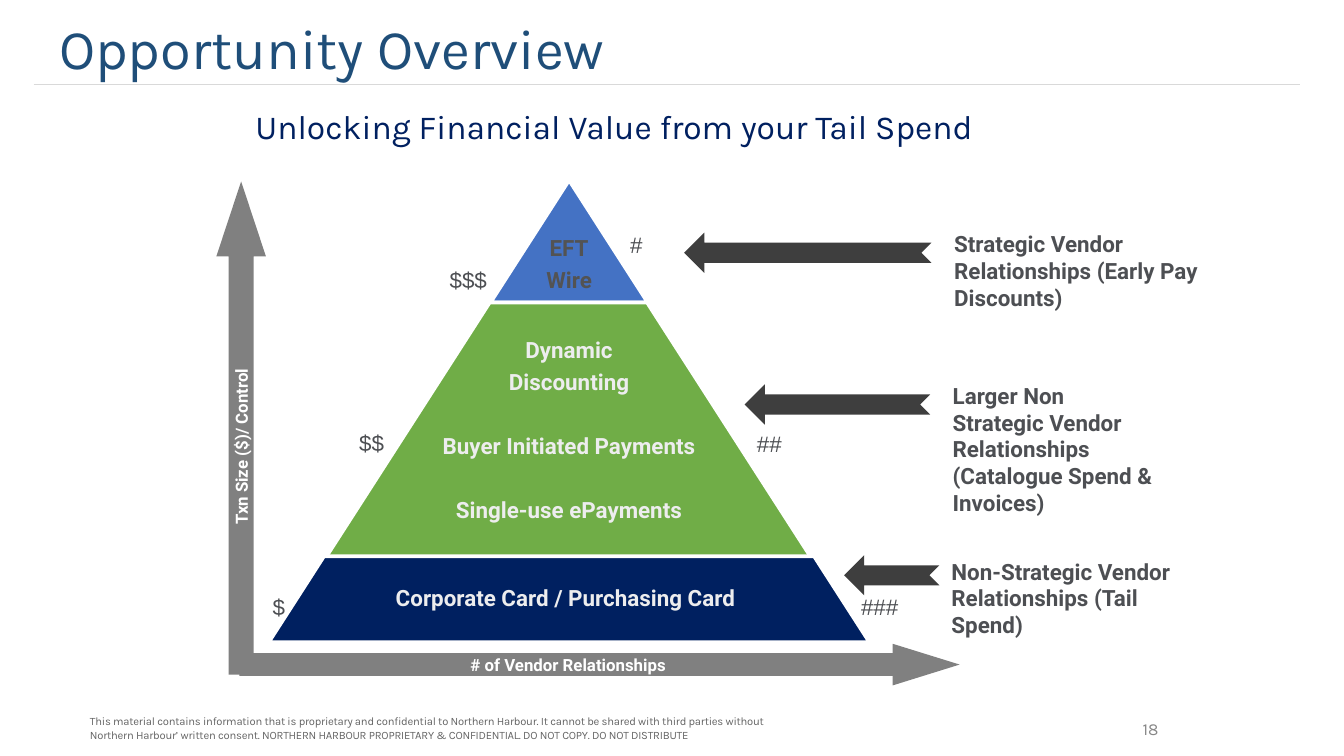
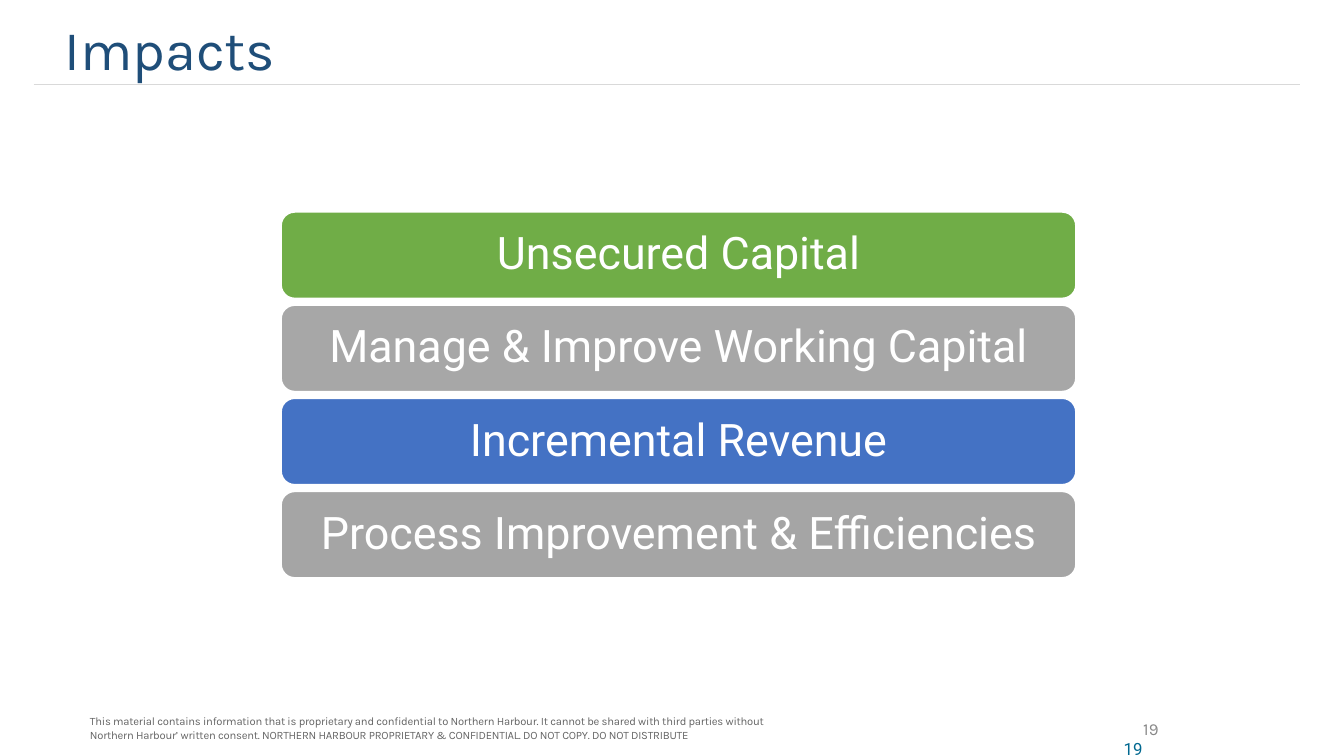
from dataclasses import dataclass

import lxml.etree
import pptx
import pptx.dml.color
import pptx.enum.shapes
import pptx.enum.text
import pptx.oxml.ns
import pptx.util

Pt = pptx.util.Pt
RGBColor = pptx.dml.color.RGBColor
Shape = pptx.enum.shapes.MSO_SHAPE
Align = pptx.enum.text.PP_ALIGN
Anchor = pptx.enum.text.MSO_ANCHOR

WHITE = RGBColor(0xFF, 0xFF, 0xFF)
TITLE_BLUE = RGBColor(0x1F, 0x4E, 0x79)
NAVY = RGBColor(0x00, 0x20, 0x60)
BLUE = RGBColor(0x44, 0x72, 0xC4)
GREEN = RGBColor(0x70, 0xAD, 0x47)
TEAL = RGBColor(0x00, 0x68, 0x90)
BAR_GRAY = RGBColor(0xA7, 0xA7, 0xA7)
BAR_GRAY_DARK = RGBColor(0xA5, 0xA5, 0xA5)
AXIS_GRAY = RGBColor(0x80, 0x80, 0x80)
ARROW_GRAY = RGBColor(0x3E, 0x3E, 0x3E)
RULE_GRAY = RGBColor(0xD9, 0xD9, 0xD9)
FOOTER_GRAY = RGBColor(0x64, 0x64, 0x64)
NUMBER_GRAY = RGBColor(0x88, 0x88, 0x88)
LABEL_GRAY = RGBColor(0x4D, 0x4F, 0x53)
TOP_TIER_TEXT = RGBColor(0x53, 0x53, 0x53)
TIER_TEXT = RGBColor(0xED, 0xED, 0xEE)

FOOTER = (
    "This material contains information that is proprietary and confidential to Northern Harbour. "
    "It cannot be shared with third parties without\n"
    "Northern Harbour’ written consent. NORTHERN HARBOUR PROPRIETARY & CONFIDENTIAL. "
    "DO NOT COPY. DO NOT DISTRIBUTE"
)


@dataclass(frozen=True)
class Frame:
    left: float
    top: float
    width: float
    height: float

    def lengths(self) -> tuple:
        return Pt(self.left), Pt(self.top), Pt(self.width), Pt(self.height)


@dataclass(frozen=True)
class Style:
    size: float
    color: RGBColor
    font: str = "Roboto"
    bold: bool = False
    align: Align = Align.LEFT
    anchor: Anchor = Anchor.TOP
    margins: tuple = (5, 2.2, 5, 2.2)
    line_spacing: float = 1.0
    space_after: float = 0
    group_gap: float = 0
    tracking: float = 0
    wrap: bool = True


@dataclass(frozen=True)
class Tier:
    frame: Frame
    fill: RGBColor
    text_frame: Frame
    text_color: RGBColor
    groups: tuple


@dataclass(frozen=True)
class Segment:
    arrow: Frame
    label: Frame
    text: str


@dataclass(frozen=True)
class Sign:
    left: float
    top: float
    text: str


@dataclass(frozen=True)
class Bar:
    text: str
    fill: RGBColor


SMALL_MARGINS = (2.9, 2.9, 2.9, 2.9)
TITLE_STYLE = Style(30, TITLE_BLUE, "Karla", anchor=Anchor.MIDDLE,
                    margins=SMALL_MARGINS, line_spacing=0.9)
SUBTITLE_STYLE = Style(18, NAVY, "Karla", margins=SMALL_MARGINS, line_spacing=0.9)
FOOTER_STYLE = Style(6, FOOTER_GRAY, "Karla", margins=(0, 3.6, 7.2, 3.6), tracking=-0.1)
NUMBER_STYLE = Style(9, NUMBER_GRAY, "Karla", align=Align.RIGHT,
                     anchor=Anchor.MIDDLE, margins=SMALL_MARGINS)
EXTRA_NUMBER_STYLE = Style(9, TEAL, align=Align.RIGHT, margins=(7.2, 3.6, 7.2, 3.6))
LABEL_STYLE = Style(12, LABEL_GRAY, bold=True)
SIGN_STYLE = Style(12, LABEL_GRAY, "Arial", align=Align.CENTER)
AXIS_STYLE = Style(9, WHITE, bold=True, align=Align.CENTER, anchor=Anchor.MIDDLE,
                   margins=(5, 2.9, 5, 2.9), wrap=False)
BAR_STYLE = Style(24, WHITE, align=Align.CENTER, anchor=Anchor.MIDDLE,
                  margins=(7.2, 3.6, 7.2, 3.6), line_spacing=0.9)

TIERS = (
    Tier(Frame(262.8, 96.5, 84.2, 65.5), BLUE, Frame(262.8, 109.2, 84.2, 65.5),
         TOP_TIER_TEXT, ("EFT\nWire",)),
    Tier(Frame(173.5, 162, 262, 138.2), GREEN, Frame(219.6, 162, 170.6, 138.2),
         TIER_TEXT, ("Dynamic\nDiscounting", "Buyer Initiated Payments",
                     "Single-use ePayments")),
    Tier(Frame(144, 298, 321.8, 46), NAVY, Frame(198.6, 298, 208.8, 46),
         TIER_TEXT, ("Corporate Card / Purchasing Card",)),
)
SEGMENTS = (
    Segment(Frame(366.5, 124.6, 132.5, 21.6), Frame(506.2, 121, 148.3, 48.2),
            "Strategic Vendor Relationships (Early Pay Discounts)"),
    Segment(Frame(398.9, 205.9, 99.4, 21.6), Frame(505.4, 202.3, 117.4, 77.8),
            "Larger Non Strategic Vendor Relationships (Catalogue Spend & Invoices)"),
    Segment(Frame(452.2, 297.4, 51.1, 21.6), Frame(504.7, 296.6, 143.3, 48.2),
            "Non-Strategic Vendor Relationships (Tail Spend)"),
)
SIGNS = (
    Sign(231.8, 140.4, "$$$"), Sign(180, 227.5, "$$"), Sign(130.3, 315.4, "$"),
    Sign(321.8, 121.7, "#"), Sign(393.1, 228.2, "##"), Sign(452.2, 315.4, "###"),
)
BARS = (
    Bar("Unsecured Capital", GREEN),
    Bar("Manage & Improve Working Capital", BAR_GRAY),
    Bar("Incremental Revenue", BLUE),
    Bar("Process Improvement & Efficiencies", BAR_GRAY_DARK),
)
BAR_PITCH = 49.9


def write(shape, style: Style, *groups: str) -> None:
    """Fill a shape with groups of lines, parted by the style's group gap."""
    text_frame = shape.text_frame
    text_frame.text = "\n".join(groups)
    text_frame.word_wrap = style.wrap
    text_frame.vertical_anchor = style.anchor
    (text_frame.margin_left, text_frame.margin_top,
     text_frame.margin_right, text_frame.margin_bottom) = map(Pt, style.margins)
    starts_group = [row == 0 for group in groups for row in range(len(group.split("\n")))]
    for index, (para, is_start) in enumerate(zip(text_frame.paragraphs, starts_group)):
        para.alignment = style.align
        para.line_spacing = style.line_spacing
        para.space_before = Pt(style.group_gap if is_start and index else 0)
        para.space_after = Pt(style.space_after)
        for span in para.runs:
            span.font.size = Pt(style.size)
            span.font.name = style.font
            span.font.bold = style.bold
            span.font.color.rgb = style.color
            if style.tracking:
                span._r.get_or_add_rPr().set("spc", str(round(style.tracking * 100)))


def add_text(page, frame: Frame, style: Style, *groups: str) -> None:
    write(page.shapes.add_textbox(*frame.lengths()), style, *groups)


def add_block(page, kind: Shape, frame: Frame, fill: RGBColor,
              adjustments: tuple = (), outlined: bool = False, rotation: float = 0):
    block = page.shapes.add_shape(kind, *frame.lengths())
    block.shadow.inherit = False
    block.rotation = rotation
    block.fill.solid()
    block.fill.fore_color.rgb = fill
    if outlined:
        block.line.color.rgb = WHITE
        block.line.width = Pt(2)
    else:
        block.line.fill.background()
    for index, value in enumerate(adjustments):
        block.adjustments[index] = value
    return block


def add_page(deck, title: str, title_frame: Frame, number: int):
    """Start a slide with the shared title, rule, footer and number."""
    page = deck.slides.add_slide(deck.slide_layouts[6])
    add_text(page, Frame(461.5, 382.3, 162, 16.6), NUMBER_STYLE, str(number))
    add_text(page, Frame(48.2, 379.4, 530, 21.6), FOOTER_STYLE, FOOTER)
    rule = page.shapes.add_connector(pptx.enum.shapes.MSO_CONNECTOR.STRAIGHT,
                                     Pt(18), Pt(45.2), Pt(696.2), Pt(45.2))
    rule.line.color.rgb = RULE_GRAY
    rule.line.width = Pt(0.75)
    lxml.etree.SubElement(rule._element.spPr, pptx.oxml.ns.qn("a:effectLst"))
    add_text(page, title_frame, TITLE_STYLE, title)
    return page


def build_overview(deck) -> None:
    page = add_page(deck, "Opportunity Overview", Frame(28.8, 7.9, 620.6, 38.9), 18)
    add_text(page, Frame(133.9, 56.2, 406, 43.9), SUBTITLE_STYLE,
             "Unlocking Financial Value from your Tail Spend")

    # Pyramid
    for tier in TIERS:
        add_block(page, Shape.TRAPEZOID, tier.frame, tier.fill, (0.643,), outlined=True)
        style = Style(12, tier.text_color, bold=True, align=Align.CENTER,
                      anchor=Anchor.MIDDLE, margins=(1.4, 1.4, 1.4, 1.4),
                      line_spacing=0.9, space_after=4.2, group_gap=17)
        add_text(page, tier.text_frame, style, *tier.groups)

    # Vendor segments and the signs along the slopes
    for segment in SEGMENTS:
        add_block(page, Shape.NOTCHED_RIGHT_ARROW, segment.arrow, ARROW_GRAY, rotation=180)
        add_text(page, segment.label, LABEL_STYLE, segment.text)
    for sign in SIGNS:
        add_text(page, Frame(sign.left, sign.top, 38.2, 19.4), SIGN_STYLE, sign.text)

    # Axes
    size_axis = add_block(page, Shape.RIGHT_ARROW, Frame(-2.9, 216, 264.2, 26.6),
                          AXIS_GRAY, (0.5, 1.511), rotation=270)
    write(size_axis, AXIS_STYLE, "Txn Size ($)/ Control")
    vendor_axis = add_block(page, Shape.RECTANGLE, Frame(128.2, 349.9, 352.1, 12.2), AXIS_GRAY)
    write(vendor_axis, AXIS_STYLE, "# of Vendor Relationships")
    add_block(page, Shape.RIGHT_ARROW, Frame(373, 344.9, 141.1, 22.3),
              AXIS_GRAY, (0.5, 1.608))


def build_impacts(deck) -> None:
    page = add_page(deck, "Impacts", Frame(31.7, 8.6, 620.6, 38.9), 19)
    for row, bar in enumerate(BARS):
        frame = Frame(150, 113 + row * BAR_PITCH, 427, 47.5)
        block = add_block(page, Shape.ROUNDED_RECTANGLE, frame, bar.fill, outlined=True)
        write(block, BAR_STYLE, bar.text)
    add_text(page, Frame(568, 392.4, 51.1, 13), EXTRA_NUMBER_STYLE, "19")


def main() -> None:
    deck = pptx.Presentation()
    deck.slide_width, deck.slide_height = Pt(720), Pt(405)
    build_overview(deck)
    build_impacts(deck)
    deck.save("out.pptx")


if __name__ == "__main__":
    main()
